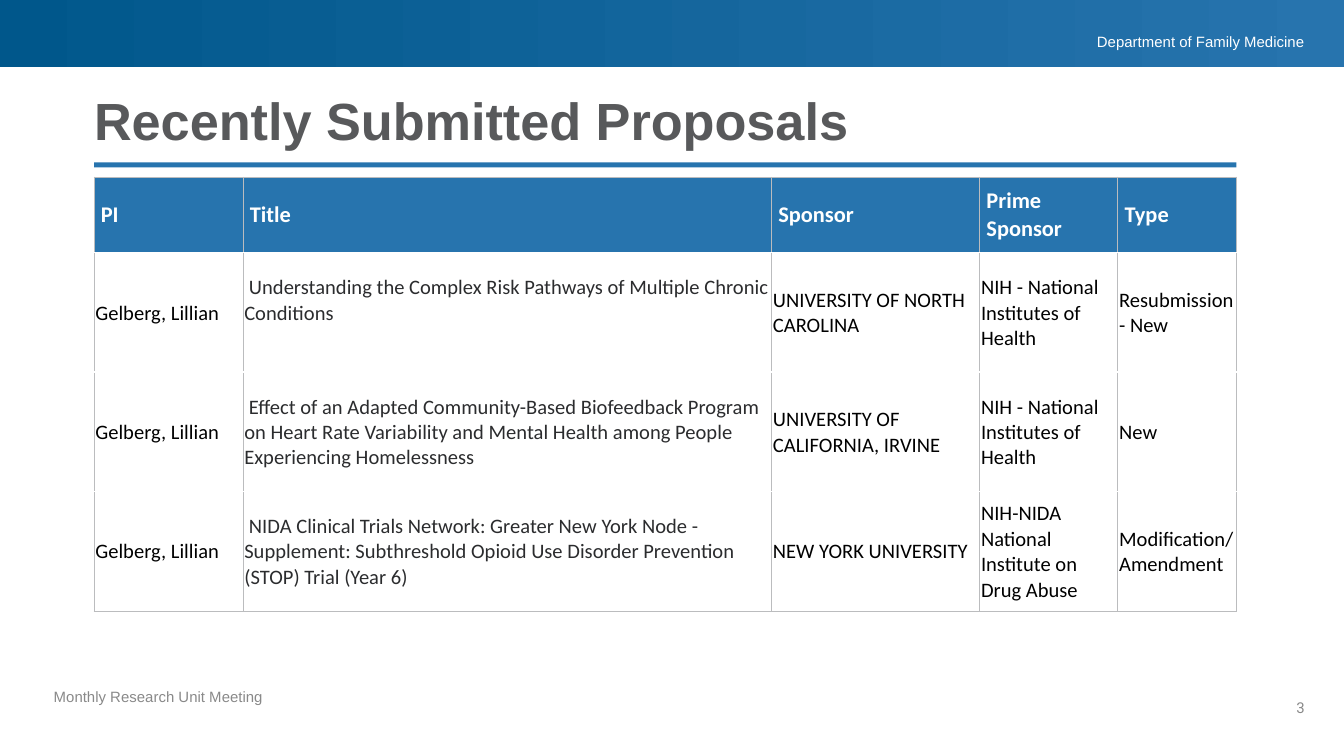
from pptx import Presentation
from pptx.dml.color import RGBColor
from pptx.enum.shapes import MSO_SHAPE
from pptx.enum.text import MSO_ANCHOR, PP_ALIGN
from pptx.oxml import parse_xml
from pptx.oxml.ns import nsdecls
from pptx.util import Pt

RECT = MSO_SHAPE.RECTANGLE
LEFT, RIGHT = PP_ALIGN.LEFT, PP_ALIGN.RIGHT
TOP, MIDDLE, BOTTOM = MSO_ANCHOR.TOP, MSO_ANCHOR.MIDDLE, MSO_ANCHOR.BOTTOM

BLUE, DARK_BLUE, WHITE, BLACK = "2774AE", "00578B", "FFFFFF", "000000"
TITLE_GRAY, FOOTER_GRAY, BORDER, INK = "58595B", "898989", "BBBCBE", "2B2C2E"

MARGIN, CONTENT_WIDTH = 50.4, 612
COL_WIDTHS = [79.8, 283.2, 111.5, 74, 63.5]
ROW_HEIGHTS = [40.6, 64, 64, 64]
TITLE_COL = 1
HEADERS = ["PI", "Title", "Sponsor", "Prime Sponsor", "Type"]
PROPOSALS = [
    ["Gelberg, Lillian",
     "Understanding the Complex Risk Pathways of Multiple Chronic Conditions",
     "UNIVERSITY OF NORTH CAROLINA",
     "NIH - National Institutes of Health",
     "Resubmission - New"],
    ["Gelberg, Lillian",
     "Effect of an Adapted Community-Based Biofeedback Program on Heart Rate "
     "Variability and Mental Health among People Experiencing Homelessness",
     "UNIVERSITY OF CALIFORNIA, IRVINE",
     "NIH - National Institutes of Health",
     "New"],
    ["Gelberg, Lillian",
     "NIDA Clinical Trials Network: Greater New York Node - Supplement: "
     "Subthreshold Opioid Use Disorder Prevention (STOP) Trial (Year 6)",
     "NEW YORK UNIVERSITY",
     "NIH-NIDA National Institute on Drug Abuse",
     "Modification/Amendment"],
]


def color(value):
    return RGBColor.from_string(value)


def set_margins(target, left, top, right, bottom):
    target.margin_left, target.margin_top = Pt(left), Pt(top)
    target.margin_right, target.margin_bottom = Pt(right), Pt(bottom)


def set_font(p, name, size, value, bold=False):
    p.font.name, p.font.size, p.font.bold = name, Pt(size), bold
    p.font.color.rgb = color(value)


def add_bar(s, x, y, w, h, fill, fill_end=None):
    sp = s.shapes.add_shape(RECT, Pt(x), Pt(y), Pt(w), Pt(h))
    sp.shadow.inherit = False
    sp.line.fill.background()
    if fill_end:
        sp.fill.gradient()
        sp.fill.gradient_angle = 0
        for stop, value in zip(sp.fill.gradient_stops, (fill, fill_end)):
            stop.color.rgb = color(value)
    else:
        sp.fill.solid()
        sp.fill.fore_color.rgb = color(fill)


def add_text(s, text, x, y, w, h, size, value, font="Arial", bold=False,
             align=LEFT, anchor=TOP, spacing=1.0):
    tf = s.shapes.add_textbox(Pt(x), Pt(y), Pt(w), Pt(h)).text_frame
    tf.word_wrap = True
    tf.vertical_anchor = anchor
    set_margins(tf, 0, 0, 0, 0)
    p = tf.paragraphs[0]
    p.text = text
    p.alignment = align
    p.line_spacing = spacing
    set_font(p, font, size, value, bold)


def set_borders(cell, sides):
    tcPr = cell._tc.get_or_add_tcPr()
    for i, side in enumerate(sides):
        tcPr.insert(i, parse_xml(
            f'<a:ln{side} {nsdecls("a")} w="{Pt(0.5)}"><a:solidFill>'
            f'<a:srgbClr val="{BORDER}"/></a:solidFill></a:ln{side}>'))


def fill_cell(cell, text, fill, value, size, margins, sides, bold=False):
    cell.vertical_anchor = MIDDLE
    set_margins(cell, *margins)
    cell.fill.solid()
    cell.fill.fore_color.rgb = color(fill)
    set_borders(cell, sides)
    p = cell.text_frame.paragraphs[0]
    p.text = text
    set_font(p, "Calibri", size, value, bold)
    return p


def add_proposals(s, x, y):
    table = s.shapes.add_table(
        len(ROW_HEIGHTS), len(COL_WIDTHS), Pt(x), Pt(y),
        Pt(sum(COL_WIDTHS)), Pt(sum(ROW_HEIGHTS))).table
    for column, width in zip(table.columns, COL_WIDTHS):
        column.width = Pt(width)
    for row, height in zip(table.rows, ROW_HEIGHTS):
        row.height = Pt(height)
    for c, text in enumerate(HEADERS):
        fill_cell(table.cell(0, c), text, BLUE, WHITE, 12,
                  (3.6, 3.6, 3.6, 3.6), "LRT", True)
    for r, proposal in enumerate(PROPOSALS, 1):
        for c, text in enumerate(proposal):
            value = INK if c == TITLE_COL else BLACK
            p = fill_cell(table.cell(r, c), text, WHITE, value, 11,
                          (0.7, 0.7, 0.7, 0), "LRB")
            if c == TITLE_COL:
                p._p.get_or_add_pPr().set("indent", str(Pt(2.5)))
    table.cell(1, TITLE_COL).margin_bottom = Pt(13.5)


def main():
    prs = Presentation()
    prs.slide_width, prs.slide_height = Pt(720), Pt(405)
    s = prs.slides.add_slide(prs.slide_layouts[6])

    add_bar(s, MARGIN, 87, CONTENT_WIDTH, 2.7, BLUE)
    add_bar(s, 0, 0, 720, 36, DARK_BLUE, BLUE)
    add_text(s, "Department of Family Medicine", 518.4, 17.3, 180.5, 10,
             8, WHITE, align=RIGHT)
    add_text(s, "Monthly Research Unit Meeting", 28.8, 369.5, 280.8, 28.8,
             8, FOOTER_GRAY, spacing=0.9)
    add_text(s, "3", 663, 374.4, 36, 28.8, 8, FOOTER_GRAY, "Roboto",
             align=RIGHT)
    add_text(s, "Recently Submitted Proposals", MARGIN, 50.4, CONTENT_WIDTH,
             31, 28, TITLE_GRAY, bold=True, anchor=BOTTOM, spacing=0.9)
    add_proposals(s, MARGIN, 94.8)

    prs.save("out.pptx")


if __name__ == "__main__":
    main()
